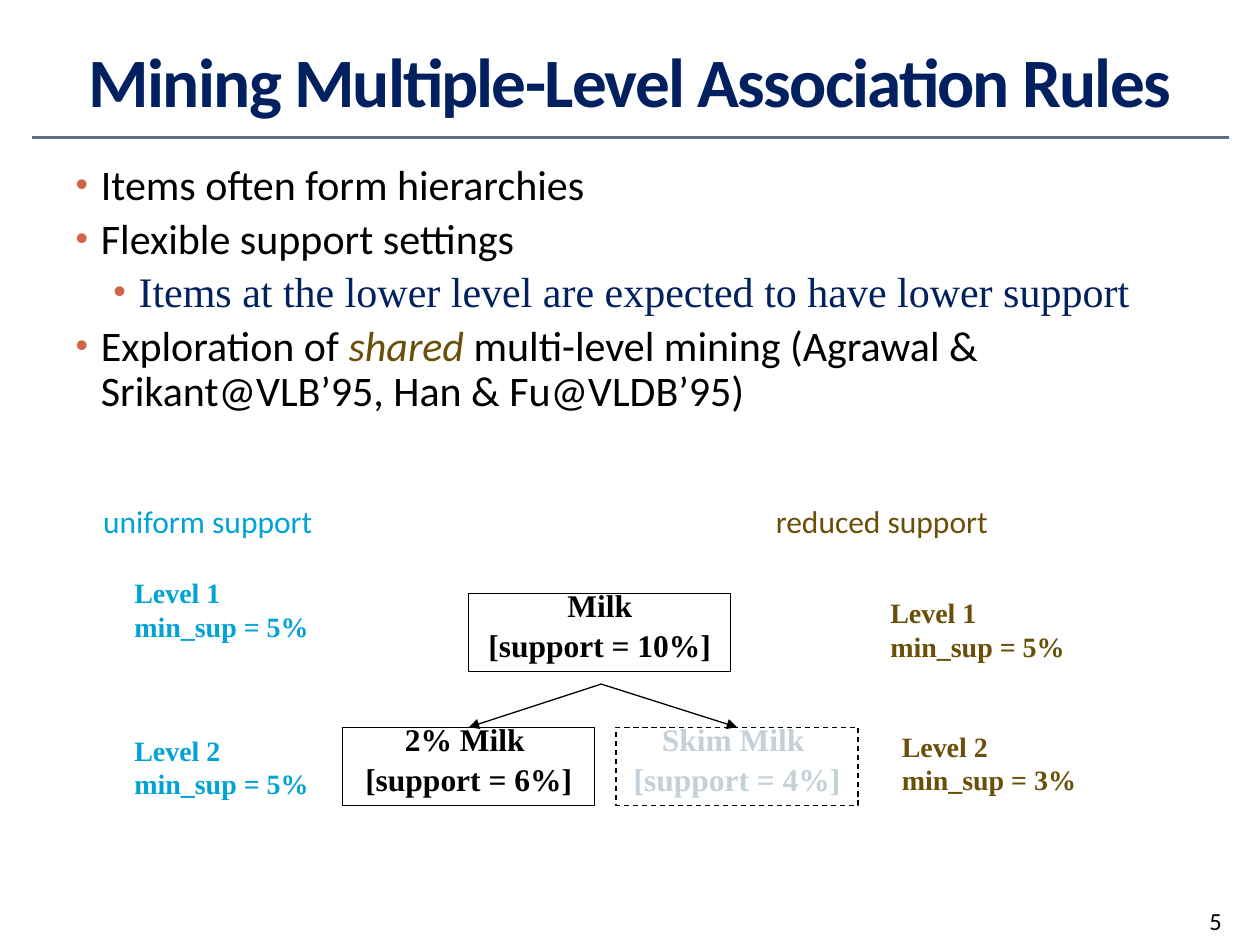
"""Build a slide on mining multiple-level association rules."""
import pptx
import pptx.dml.color
import pptx.enum.dml
import pptx.enum.shapes
import pptx.enum.text
import pptx.oxml
import pptx.oxml.ns
import pptx.util

Cm = pptx.util.Cm
Pt = pptx.util.Pt
RGBColor = pptx.dml.color.RGBColor
Align = pptx.enum.text.PP_ALIGN
Anchor = pptx.enum.text.MSO_ANCHOR
Connector = pptx.enum.shapes.MSO_CONNECTOR
qn = pptx.oxml.ns.qn

BLACK = RGBColor(0x00, 0x00, 0x00)
WHITE = RGBColor(0xFF, 0xFF, 0xFF)
NAVY = RGBColor(0x00, 0x20, 0x60)
SLATE = RGBColor(0x64, 0x6B, 0x86)
BROWN = RGBColor(0x69, 0x4F, 0x07)
CYAN = RGBColor(0x00, 0xA3, 0xD6)
PALE = RGBColor(0xC5, 0xD1, 0xD7)
RUST = RGBColor(0xD1, 0x63, 0x49)
SANS, SERIF = "Calibri", "Times New Roman"

TITLE = "Mining Multiple-Level Association Rules"
TITLE_FORMAT = {"name": SANS, "size": Pt(39.6), "bold": True}
PLAIN = {"name": SANS, "size": Pt(24)}
BULLETS = [
    (0, [("Items often form hierarchies", BLACK, PLAIN)]),
    (0, [("Flexible support settings", BLACK, PLAIN)]),
    (1, [("Items at the lower level are expected to have lower support",
          NAVY, {**PLAIN, "name": SERIF})]),
    (0, [("Exploration of ", BLACK, PLAIN),
         ("shared", BROWN, {**PLAIN, "italic": True}),
         (" multi-level mining (Agrawal & Srikant@VLB’95, Han & Fu@VLDB’95)",
          BLACK, PLAIN)]),
]

HEADING = {"name": SANS, "size": Pt(18)}
LEVEL = {"name": SERIF, "size": Pt(16), "bold": True}
NUMBER = {"name": SANS, "size": Pt(14)}
LABELS = [
    (["uniform support"], (1.83, 10, 6.78, 1.47), CYAN, HEADING, True),
    (["reduced support"], (15.39, 10, 6.6, 1.27), BROWN, HEADING, True),
    (["Level 1", "min_sup = 5%"], (2.46, 11.48, 4.04, 1.62), CYAN, LEVEL, False),
    (["Level 2", "min_sup = 5%"], (2.46, 14.66, 4.04, 1.62), CYAN, LEVEL, False),
    (["Level 1", "min_sup = 5%"], (17.7, 11.89, 4.04, 1.62), BROWN, LEVEL, False),
    (["Level 2", "min_sup = 3%"], (17.93, 14.58, 4.04, 1.62), BROWN, LEVEL, False),
    (["5"], (24.13, 18.14, 1.27, 0.91), BLACK, NUMBER, True),
]

ITEM = {"name": SERIF, "size": Pt(18), "bold": True}
ITEMS = {
    "milk": (["Milk", "[support = 10%]"], (9.45, 11.96, 5.28, 1.58), BLACK),
    "two percent": (["2% Milk ", "[support = 6%]"], (6.91, 14.66, 5.08, 1.58), BLACK),
    "skim": (["Skim Milk ", "[support = 4%]"], (12.42, 14.66, 4.88, 1.58), PALE),
}
BRANCH_POINT = (Cm(12.12), Cm(13.79))


def add_run(paragraph, text, color, formats):
    run = paragraph.add_run()
    run.text = text
    for name, value in formats.items():
        setattr(run.font, name, value)
    run.font.color.rgb = color
    return run


def place(shape, box):
    for name, value in zip(("left", "top", "width", "height"), box):
        setattr(shape, name, Cm(value))


def paragraphs_for(text_frame, entries):
    for index, entry in enumerate(entries):
        paragraph = text_frame.paragraphs[0] if index == 0 else text_frame.add_paragraph()
        yield index, paragraph, entry


def add_child(parent, tag, **attributes):
    child = pptx.oxml.parse_xml(f"<{tag} {pptx.oxml.ns.nsdecls('a')}/>")
    for name, value in attributes.items():
        child.set(name, str(value))
    parent.append(child)
    return child


def set_bullet(paragraph, level):
    properties = paragraph._p.get_or_add_pPr()
    properties.set("marL", str(Cm(1.27 if level else 0.51)))
    properties.set("indent", str(Cm(-0.51)))
    add_child(add_child(properties, "a:buClr"), "a:srgbClr", val=RUST)
    add_child(properties, "a:buSzPct", val=85000)
    add_child(properties, "a:buFont", typeface="Arial")
    add_child(properties, "a:buChar", char="•")


def add_line(slide, start, end, color, width):
    line = slide.shapes.add_connector(Connector.STRAIGHT, *start, *end)
    line.line.color.rgb = color
    line.line.width = Pt(width)
    add_child(line._element.spPr, "a:effectLst")
    return line


def fill_title(title):
    place(title, (1.27, 0.43, 22.86, 2.34))
    title.text_frame.vertical_anchor = Anchor.MIDDLE
    title.text_frame.auto_size = pptx.enum.text.MSO_AUTO_SIZE.NONE
    paragraph = title.text_frame.paragraphs[0]
    paragraph.alignment = Align.CENTER
    run = add_run(paragraph, TITLE, NAVY, TITLE_FORMAT)
    run.font._element.set("spc", "-100")


def fill_body(body):
    place(body, (1.27, 3.18, 22.86, 14.81))
    body.text_frame.auto_size = pptx.enum.text.MSO_AUTO_SIZE.NONE
    for index, paragraph, (level, runs) in paragraphs_for(body.text_frame, BULLETS):
        set_bullet(paragraph, level)
        paragraph.level = level
        paragraph.line_spacing = 0.9
        paragraph.space_before = Pt(4.8 if index else 0)
        for text, color, formats in runs:
            add_run(paragraph, text, color, formats)


def add_label(slide, lines, box, color, formats, wrap):
    label = slide.shapes.add_textbox(*map(Cm, box))
    label.text_frame.word_wrap = wrap
    for _, paragraph, text in paragraphs_for(label.text_frame, lines):
        add_run(paragraph, text, color, formats)


def add_item(slide, lines, box, color):
    item = slide.shapes.add_shape(pptx.enum.shapes.MSO_SHAPE.RECTANGLE, *map(Cm, box))
    item.shadow.inherit = False
    item.fill.solid()
    item.fill.fore_color.rgb = WHITE
    item.line.color.rgb = BLACK
    item.line.width = Pt(0.75)
    item.text_frame.vertical_anchor = Anchor.TOP
    for index, paragraph, text in paragraphs_for(item.text_frame, lines):
        paragraph.alignment = Align.CENTER
        paragraph.line_spacing = 0.6
        paragraph.space_before = Pt(10 if index else 0)
        add_run(paragraph, text, color, ITEM)
    return item


def main():
    presentation = pptx.Presentation()
    presentation.slide_width, presentation.slide_height = Cm(25.4), Cm(19.05)
    slide = presentation.slides.add_slide(presentation.slide_layouts[1])
    add_line(slide, (Cm(0.64), Cm(2.77)), (Cm(24.77), Cm(2.77)), SLATE, 1.5)
    fill_title(slide.shapes.title)
    fill_body(slide.placeholders[1])

    items = {name: add_item(slide, *item) for name, item in ITEMS.items()}
    skim = items["skim"]
    skim.line.dash_style = pptx.enum.dml.MSO_LINE.DASH
    skim_fill = skim._element.spPr.find(qn("a:solidFill"))
    add_child(skim_fill.find(qn("a:srgbClr")), "a:alpha", val=50000)

    for label in LABELS:
        add_label(slide, *label)
    for child in (items["two percent"], skim):
        arrow = add_line(slide, BRANCH_POINT, BRANCH_POINT, BLACK, 0.75)
        arrow.end_connect(child, 0)
        add_child(arrow.line._get_or_add_ln(), "a:tailEnd", type="triangle")
    presentation.save("out.pptx")


if __name__ == "__main__":
    main()
